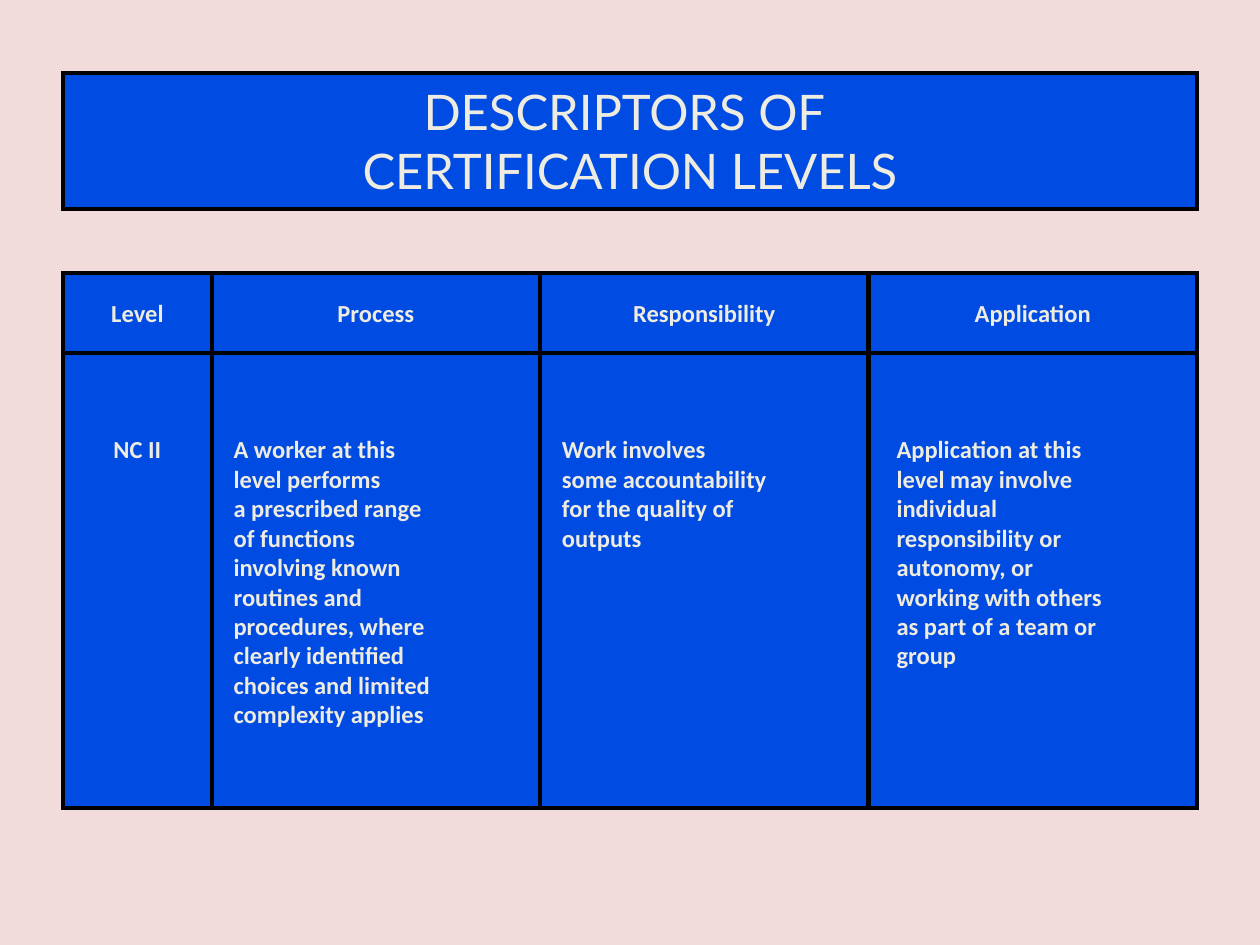
from lxml import etree
from pptx import Presentation
from pptx.dml.color import RGBColor
from pptx.enum.shapes import MSO_SHAPE
from pptx.enum.text import MSO_ANCHOR, PP_ALIGN
from pptx.oxml.ns import qn
from pptx.util import Pt

RECTANGLE = MSO_SHAPE.RECTANGLE
TOP, MIDDLE = MSO_ANCHOR.TOP, MSO_ANCHOR.MIDDLE
LEFT, CENTER = PP_ALIGN.LEFT, PP_ALIGN.CENTER

BLUE, CREAM, BLACK, PINK = "004BE2", "EEECE1", "000000", "F2DCDB"
MARGIN_LEFT, CONTENT_WIDTH = 36, 648
LEVEL_WIDTH = 85
HEADER_TOP, HEADER_HEIGHT, BODY_HEIGHT = 156, 45.5, 260.5
BODY_TEXT_OFFSET = 46.8

TITLE = "DESCRIPTORS OF \nCERTIFICATION LEVELS"

# heading, body, body alignment, body indent
COLUMNS = [
    ("Level", "NC II", CENTER, 9),
    ("Process",
     "A worker at this\nlevel performs\na prescribed range\nof functions\n"
     "involving known\nroutines and\nprocedures, where\nclearly identified\n"
     "choices and limited\ncomplexity applies", LEFT, 12.5),
    ("Responsibility",
     "Work involves\nsome accountability\nfor the quality of\noutputs", LEFT, 12.5),
    ("Application",
     "Application at this\nlevel may involve\nindividual\nresponsibility or\n"
     "autonomy, or\nworking with others\nas part of a team or\ngroup", LEFT, 16),
]


def color(hex_string):
    return RGBColor.from_string(hex_string)


def write_text(text_frame, text, *, size, font, bold=False, alignment=CENTER):
    """Write one paragraph for each line of text."""
    text_frame.text = text
    for paragraph in text_frame.paragraphs:
        paragraph.alignment = alignment
        for run in paragraph.runs:
            run.font.size = Pt(size)
            run.font.name = font
            run.font.bold = bold
            run.font.color.rgb = color(CREAM)


def add_box(shapes, left, top, width, height, text, *, anchor=TOP,
            margin_top=5, margin_left=9, **text_format):
    """Add a blue rectangle with a sharp-cornered black border and text."""
    shape = shapes.add_shape(RECTANGLE, Pt(left), Pt(top), Pt(width), Pt(height))
    shape.shadow.inherit = False
    shape.fill.solid()
    shape.fill.fore_color.rgb = color(BLUE)
    shape.line.color.rgb = color(BLACK)
    shape.line.width = Pt(2.25)
    etree.SubElement(shape.line._get_or_add_ln(), qn("a:miter"), lim="800000")
    text_frame = shape.text_frame
    text_frame.word_wrap = True
    text_frame.vertical_anchor = anchor
    text_frame.margin_top, text_frame.margin_bottom = Pt(margin_top), Pt(5)
    text_frame.margin_left, text_frame.margin_right = Pt(margin_left), Pt(9)
    write_text(text_frame, text, **text_format)


def add_levels_grid(slide):
    shapes = slide.shapes.add_group_shape().shapes
    descriptor_width = (CONTENT_WIDTH - LEVEL_WIDTH) / (len(COLUMNS) - 1)
    text_format = {"size": 14, "font": "Calibri", "bold": True}
    left = MARGIN_LEFT
    for index, (heading, body, alignment, indent) in enumerate(COLUMNS):
        width = descriptor_width if index else LEVEL_WIDTH
        add_box(shapes, left, HEADER_TOP, width, HEADER_HEIGHT, heading,
                anchor=MIDDLE, **text_format)
        add_box(shapes, left, HEADER_TOP + HEADER_HEIGHT, width, BODY_HEIGHT, body,
                margin_top=BODY_TEXT_OFFSET, margin_left=indent,
                alignment=alignment, **text_format)
        left += width


def main():
    presentation = Presentation()
    presentation.slide_width, presentation.slide_height = Pt(720), Pt(540)
    slide = presentation.slides.add_slide(presentation.slide_layouts[6])
    slide.background.fill.solid()
    slide.background.fill.fore_color.rgb = color(PINK)
    add_box(slide.shapes, MARGIN_LEFT, 41.75, CONTENT_WIDTH, 77.75, TITLE,
            size=28, font="Lato")
    add_levels_grid(slide)
    presentation.save("out.pptx")


if __name__ == "__main__":
    main()
